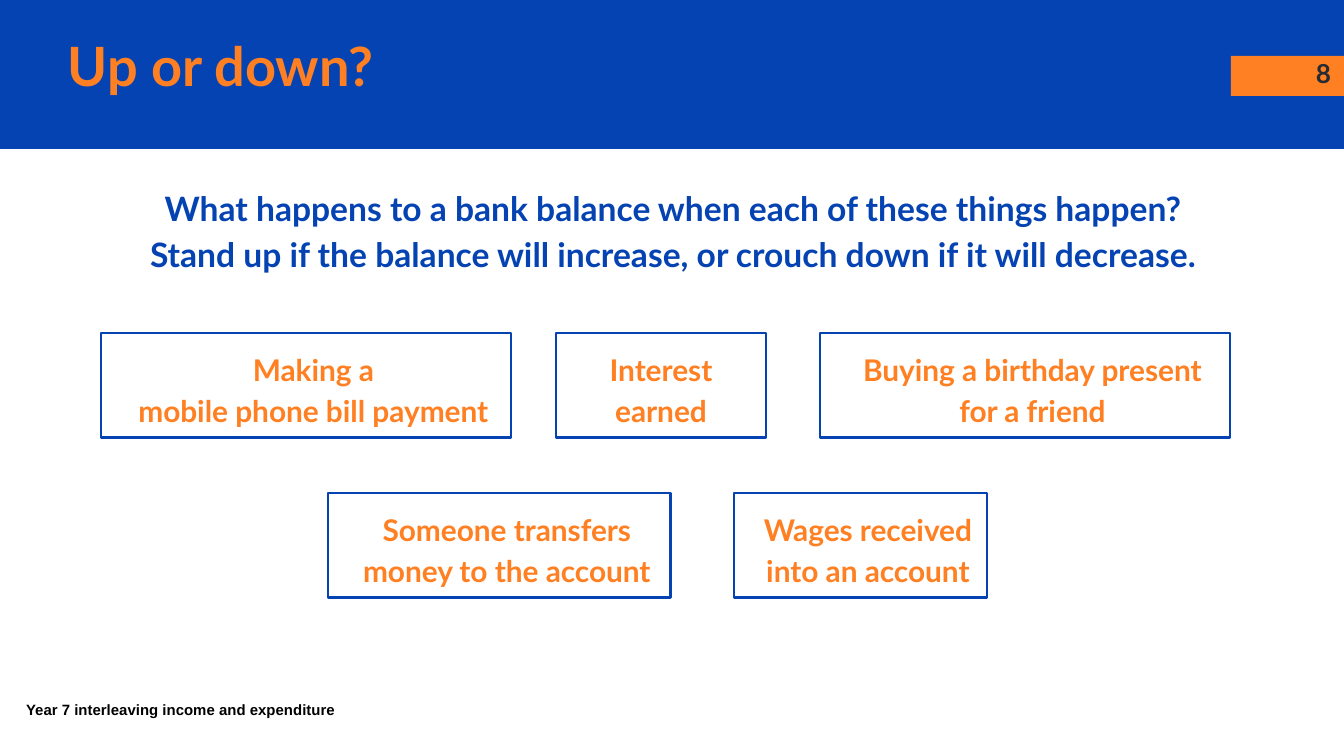
from pptx import Presentation
from pptx.dml.color import RGBColor
from pptx.enum.shapes import MSO_SHAPE
from pptx.enum.text import MSO_ANCHOR, MSO_AUTO_SIZE, PP_ALIGN
from pptx.util import Pt

RECTANGLE = MSO_SHAPE.RECTANGLE
LEFT, CENTER, RIGHT = PP_ALIGN.LEFT, PP_ALIGN.CENTER, PP_ALIGN.RIGHT
TOP, MIDDLE = MSO_ANCHOR.TOP, MSO_ANCHOR.MIDDLE
FIT_SHAPE, NO_FIT = MSO_AUTO_SIZE.SHAPE_TO_FIT_TEXT, MSO_AUTO_SIZE.NONE

# Content
TITLE = "Up or down?"
PAGE_NUMBER = "8"
QUESTION = [
    "What happens to a bank balance when each of these things happen?",
    "Stand up if the balance will increase, or crouch down if it will decrease.",
]
FOOTER = "Year 7 interleaving income and expenditure"
# Each row: top, then cards as (left, width, indent, paragraphs)
CARD_ROWS = [
    (333, [
        (101, 410, 15, ["Making a", "mobile phone bill payment"]),
        (556, 210, 0, ["Interest", "earned"]),
        (820, 410, 15, ["Buying a birthday present for a friend"]),
    ]),
    (493, [
        (328, 343, 15, ["Someone transfers", "money to the account"]),
        (734, 253, 15, ["Wages received into an account"]),
    ]),
]
CARD_HEIGHT = 105

THEME = {
    "blue": RGBColor(0x05, 0x43, 0xB3),
    "orange": RGBColor(0xFF, 0x80, 0x22),
    "dark": RGBColor(0x26, 0x2A, 0x33),
    "black": RGBColor(0, 0, 0),
    "font": "Lato",
    "footer_font": "Arial",
    "title": 29,
    "question": 18,
    "card": 16,
    "number": 14,
    "footer": 8,
    "line": 1.5,
    "spacing": 1.15,
}
INSET = 13


def px(length):
    return round(length * 914400 / 134.4)


def box(left, top, width, height):
    return px(left), px(top), px(width), px(height)


def write(shape, paragraphs, size, color, align=LEFT, font="font",
          spacing=None, indent=0, anchor=TOP, fit=NO_FIT):
    frame = shape.text_frame
    frame.text = "\n".join(paragraphs)
    frame.word_wrap = True
    frame.auto_size = fit
    frame.vertical_anchor = anchor
    frame.margin_left = frame.margin_right = px(INSET)
    frame.margin_top = frame.margin_bottom = px(INSET)
    for paragraph in frame.paragraphs:
        paragraph.alignment = align
        if spacing:
            paragraph.line_spacing = spacing
        if indent:
            properties = paragraph._p.get_or_add_pPr()
            properties.set("marL", str(px(indent)))
            properties.set("indent", "0")
        for run in paragraph.runs:
            run.font.name = THEME[font]
            run.font.size = Pt(THEME[size])
            run.font.bold = True
            run.font.color.rgb = THEME[color]


def add_rectangle(slide, area, fill=None, line=None):
    shape = slide.shapes.add_shape(RECTANGLE, *box(*area))
    shape.shadow.inherit = False
    if fill:
        shape.fill.solid()
        shape.fill.fore_color.rgb = THEME[fill]
    else:
        shape.fill.background()
    if line:
        shape.line.color.rgb = THEME[line]
        shape.line.width = Pt(THEME["line"])
    else:
        shape.line.fill.background()
    return shape


def add_text(slide, area, paragraphs, size, color, **style):
    write(slide.shapes.add_textbox(*box(*area)), paragraphs, size, color, **style)


def main():
    presentation = Presentation()
    presentation.slide_width, presentation.slide_height = px(1344), px(756)
    slide = presentation.slides.add_slide(presentation.slide_layouts[5])

    # Header band, page number tab and title
    title = slide.shapes.title
    band = add_rectangle(slide, (0, 0, 1344, 149), fill="blue")
    title._element.addprevious(band._element)
    add_rectangle(slide, (1231, 56, 113, 40), fill="orange")
    add_text(slide, (1263, 44, 81, 58), [PAGE_NUMBER], "number", "dark", align=RIGHT)
    title.left, title.top, title.width, title.height = box(55, 27, 1137, 75)
    write(title, [TITLE], "title", "orange", anchor=MIDDLE)

    # Question
    add_text(slide, (32, 169, 1267, 114), QUESTION, "question", "blue",
             align=CENTER, spacing=THEME["spacing"], indent=15, fit=FIT_SHAPE)

    # Event cards
    for top, cards in CARD_ROWS:
        for left, width, indent, paragraphs in cards:
            card = add_rectangle(slide, (left, top, width, CARD_HEIGHT), line="blue")
            write(card, paragraphs, "card", "orange", align=CENTER,
                  spacing=THEME["spacing"], indent=indent, fit=FIT_SHAPE)

    # Footer
    add_text(slide, (13, 692, 569, 46), [FOOTER], "footer", "black",
             font="footer_font", fit=FIT_SHAPE)

    presentation.save("out.pptx")


if __name__ == "__main__":
    main()
